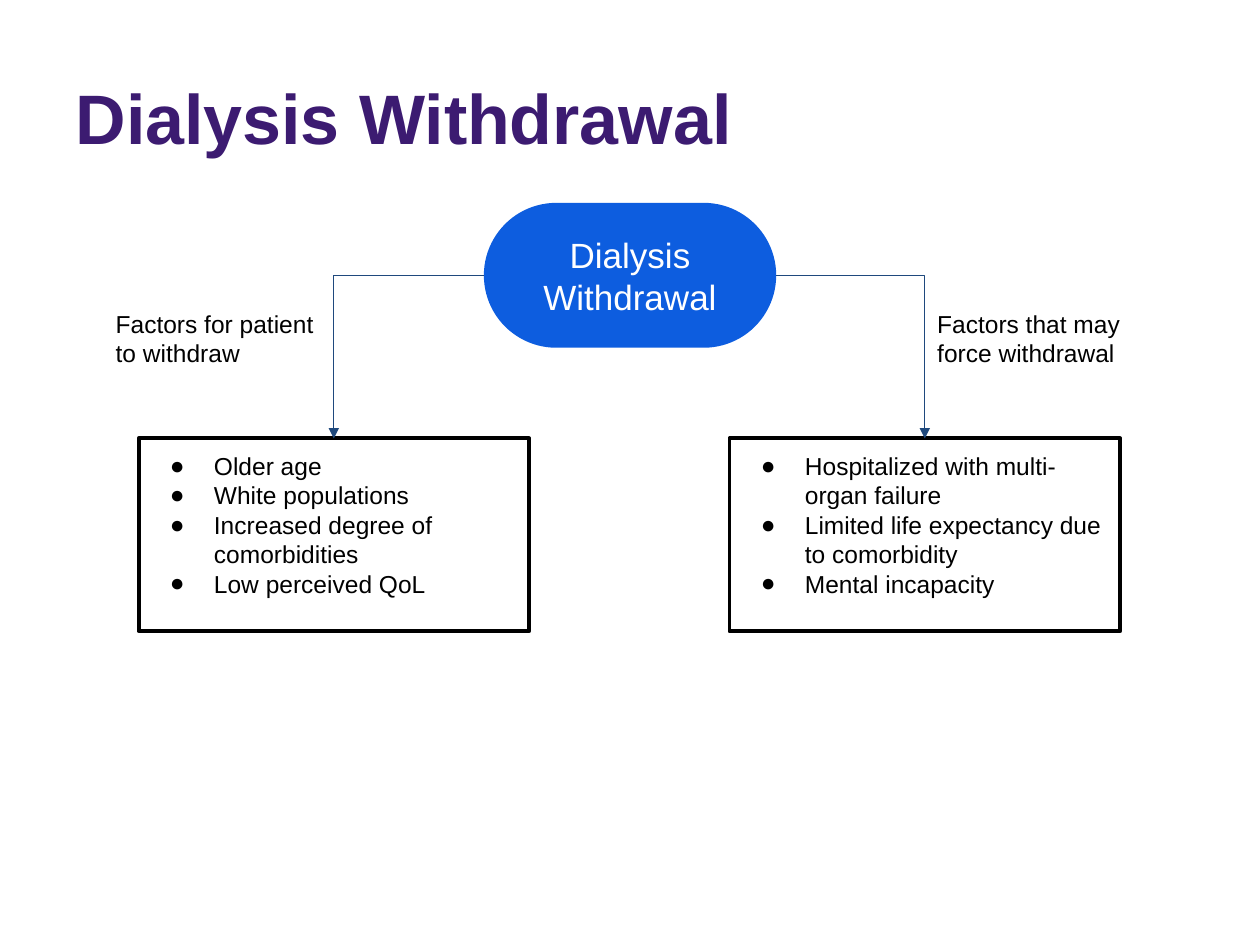
from dataclasses import dataclass

from lxml import etree
from pptx import Presentation
from pptx.dml.color import RGBColor
from pptx.enum import shapes, text
from pptx.oxml import ns
from pptx.util import Inches, Pt


@dataclass(frozen=True)
class Theme:
    font: str = "Arial"
    title: str = "3C1B71"
    node: str = "0D5DDF"
    light: str = "FFFFFF"
    ink: str = "000000"
    link: str = "1F497D"
    head: int = 40
    large: int = 20
    body: int = 14


def color(code):
    return RGBColor.from_string(code)


def child(parent, tag, **attrs):
    return etree.SubElement(parent, ns.qn(tag), attrs)


class Board:
    """Holds the theme and the current slide."""

    def __init__(self, slide, theme):
        self.slide = slide
        self.theme = theme

    def add_run(self, para, words, size, ink, bold=False):
        run = para.add_run()
        run.text = words
        font = run.font
        font.name, font.size, font.bold = self.theme.font, Pt(size), bold
        font.color.rgb = color(ink)

    def frame(self, shape, anchor=text.MSO_ANCHOR.TOP, pad=0.1):
        """Set wrapping, anchor and insets; return the text frame."""
        frame = shape.text_frame
        frame.word_wrap = True
        frame.auto_size = text.MSO_AUTO_SIZE.NONE
        frame.vertical_anchor = anchor
        frame.margin_left = frame.margin_right = Inches(0.1)
        frame.margin_top = frame.margin_bottom = Inches(pad)
        return frame

    def title(self, words, *area):
        shape = self.slide.shapes.title
        shape.left, shape.top, shape.width, shape.height = map(Inches, area)
        para = self.frame(shape, text.MSO_ANCHOR.MIDDLE, 0.05).paragraphs[0]
        para.alignment = text.PP_ALIGN.LEFT
        para.space_after = Pt(12)
        self.add_run(para, words, self.theme.head, self.theme.title, True)

    def shape(self, kind, *area):
        shape = self.slide.shapes.add_shape(kind, *map(Inches, area))
        shape.shadow.inherit = False
        return shape

    def node(self, words, *area):
        pill = self.shape(shapes.MSO_SHAPE.ROUNDED_RECTANGLE, *area)
        pill.adjustments[0] = 0.5
        pill.fill.solid()
        pill.fill.fore_color.rgb = color(self.theme.node)
        pill.line.fill.background()
        para = self.frame(pill, text.MSO_ANCHOR.MIDDLE).paragraphs[0]
        para.alignment = text.PP_ALIGN.CENTER
        self.add_run(para, words, self.theme.large, self.theme.light)
        return pill

    def bullet(self, para):
        props = para._p.get_or_add_pPr()
        props.set("marL", str(Inches(0.5)))
        props.set("indent", str(Inches(-0.35)))
        child(child(props, "a:buClr"), "a:srgbClr", val=self.theme.ink)
        child(props, "a:buFont", typeface=self.theme.font)
        child(props, "a:buChar", char="●")

    def list(self, items, *area):
        box = self.shape(shapes.MSO_SHAPE.RECTANGLE, *area)
        box.fill.background()
        box.line.color.rgb = color(self.theme.ink)
        box.line.width = Pt(2.25)
        frame = self.frame(box)
        for num, item in enumerate(items):
            para = frame.add_paragraph() if num else frame.paragraphs[0]
            para.alignment = text.PP_ALIGN.LEFT
            self.bullet(para)
            self.add_run(para, item, self.theme.body, self.theme.ink)
        return box

    def label(self, words, *area):
        box = self.slide.shapes.add_textbox(*map(Inches, area))
        para = self.frame(box).paragraphs[0]
        self.add_run(para, words, self.theme.body, self.theme.ink)

    def link(self, start, site, end):
        """Draw a one-bend arrow from a side of start to the top of end."""
        arrow = self.slide.shapes.add_connector(
            shapes.MSO_CONNECTOR.ELBOW, 0, 0, 0, 0)
        arrow.begin_connect(start, site)
        arrow.end_connect(end, 0)
        arrow.line.color.rgb = color(self.theme.link)
        arrow.line.width = Pt(0.75)
        props = arrow._element.spPr
        props.find(ns.qn("a:prstGeom")).set("prst", "bentConnector2")
        child(props.find(ns.qn("a:ln")), "a:tailEnd", type="triangle")
        child(props, "a:effectLst")


def main():
    deck = Presentation()
    deck.slide_width, deck.slide_height = Inches(10), Inches(7.5)
    board = Board(deck.slides.add_slide(deck.slide_layouts[5]), Theme())
    board.title("Dialysis Withdrawal", 0.5, 0.3, 9, 1.25)
    root = board.node("Dialysis Withdrawal", 3.84, 1.61, 2.32, 1.15)

    left, right = 1, 3  # connection sites on the sides of the node
    branches = [
        (left, 1.1, 0.82, "Factors for patient to withdraw",
         ["Older age", "White populations",
          "Increased degree of comorbidities", "Low perceived QoL"]),
        (right, 5.79, 7.34, "Factors that may force withdrawal",
         ["Hospitalized with multi-organ failure",
          "Limited life expectancy due to comorbidity",
          "Mental incapacity"]),
    ]
    for site, box_x, label_x, words, items in branches:
        box = board.list(items, box_x, 3.48, 3.1, 1.53)
        board.link(root, site, box)
        board.label(words, label_x, 2.35, 1.83, 0.64)
    deck.save("out.pptx")


if __name__ == "__main__":
    main()
